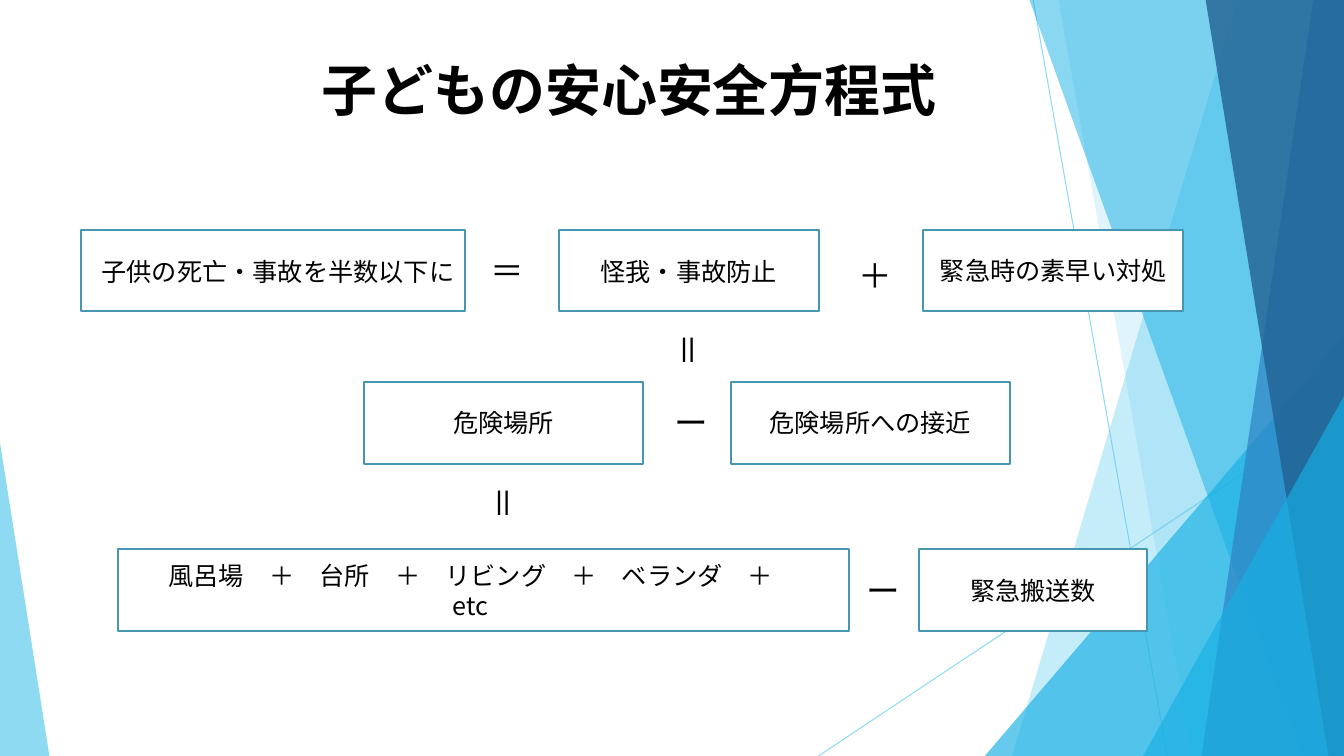
from dataclasses import dataclass

from lxml.etree import SubElement
from pptx import Presentation
from pptx.dml.color import RGBColor
from pptx.enum.shapes import MSO_CONNECTOR, MSO_SHAPE
from pptx.enum.text import MSO_ANCHOR, MSO_AUTO_SIZE, PP_ALIGN
from pptx.oxml.ns import qn
from pptx.util import Pt


@dataclass(frozen=True)
class Theme:
    """Hold the colours, font and type sizes."""
    sky: str = "5FCBEF"
    cyan: str = "17B0E4"
    blue: str = "2E83C3"
    navy: str = "226292"
    edge: str = "4696B1"
    white: str = "FFFFFF"
    ink: str = "000000"
    font: str = "Noto Sans CJK JP"
    head: int = 40
    sign: int = 24
    body: int = 18


THEME = Theme()
WIDE, HIGH, TALL = 960, 540, 58.32


def apply(item, form):
    """Set each format value on the item."""
    for name, value in form.items():
        setattr(item, name, value)


def fade(shape, share):
    """Give the colours of a shape an opacity in percent."""
    for tint in shape.element.spPr.iter(qn("a:srgbClr")):
        SubElement(tint, qn("a:alpha"), val=str(share * 1000))


def paint(shape, color):
    """Fill a shape with one colour and drop its shadow."""
    shape.shadow.inherit = False
    shape.fill.solid()
    shape.fill.fore_color.rgb = RGBColor.from_string(color)


def write(frame, text, size, align, bold=False):
    """Write text with a line break at each newline."""
    para = frame.paragraphs[0]
    para.alignment = align
    for count, part in enumerate(text.split("\n")):
        if count:
            para.add_line_break()
        run = para.add_run()
        run.text = part
        apply(run.font, {"name": THEME.font, "size": Pt(size), "bold": bold})
        run.font.color.rgb = RGBColor.from_string(THEME.ink)
        SubElement(run.font._element, qn("a:ea"), typeface=THEME.font)


def label(slide, box, text, size, bold=False, wrap=False, turn=0):
    """Place a text box that grows with its text."""
    note = slide.shapes.add_textbox(*map(Pt, box))
    note.rotation = turn
    apply(note.text_frame, {"word_wrap": wrap, "auto_size": MSO_AUTO_SIZE.SHAPE_TO_FIT_TEXT})
    write(note.text_frame, text, size, PP_ALIGN.LEFT, bold)


def panel(slide, box, text):
    """Place a framed box with centred text."""
    card = slide.shapes.add_shape(MSO_SHAPE.RECTANGLE, *map(Pt, box))
    paint(card, THEME.white)
    card.line.color.rgb = RGBColor.from_string(THEME.edge)
    card.line.width = Pt(1.5)
    apply(card.text_frame, {"word_wrap": True, "vertical_anchor": MSO_ANCHOR.MIDDLE})
    if text:
        write(card.text_frame, text, THEME.body, PP_ALIGN.CENTER)


def ray(slide, ends):
    """Draw a thin line behind the bands."""
    line = slide.shapes.add_connector(MSO_CONNECTOR.STRAIGHT, *map(Pt, ends))
    line.line.color.rgb = RGBColor.from_string(THEME.sky)
    line.line.width = Pt(0.75)
    fade(line, 70)
    SubElement(line.element.spPr, qn("a:effectLst"))


def band(slide, box, top, foot, color, share):
    """Draw a slanted band that fills the box to its right edge."""
    left, head, wide, high = box
    right, base = left + wide, head + high
    form = slide.shapes.build_freeform(Pt(top), Pt(head), scale=1.0)
    form.add_line_segments([(Pt(x), Pt(y)) for x, y in
                            ((right, head), (right, base), (foot, base))], close=True)
    shape = form.convert_to_shape()
    paint(shape, color)
    shape.line.fill.background()
    fade(shape, share)


def wedge(slide, box, left, top, wide, tip, color, share):
    """Draw a right triangle standing on the foot of the box."""
    base = box[1] + box[3]
    shape = slide.shapes.add_shape(MSO_SHAPE.ISOSCELES_TRIANGLE,
                                   *map(Pt, (box[0] + left, top, wide, base - top)))
    shape.adjustments[0] = tip
    paint(shape, color)
    shape.line.fill.background()
    fade(shape, share)


def decor(slide, box):
    """Draw the faceted backdrop in the given box."""
    for ends in ((738, 0, 833.76, HIGH), (WIDE, 290.16, 584.64, HIGH)):
        ray(slide, ends)
    band(slide, box, 884.16, 722.88, THEME.sky, 36)
    band(slide, box, 756, 851.76, THEME.sky, 20)
    wedge(slide, box, 703.44, 239.76, 256.56, 1, THEME.cyan, 66)
    band(slide, box, 735.12, 929.52, THEME.cyan, 50)
    band(slide, box, 938.16, 858.24, THEME.blue, 70)
    band(slide, box, 861.12, 948.96, THEME.navy, 80)
    wedge(slide, box, 816.48, 282.96, 143.52, 1, THEME.cyan, 66)
    wedge(slide, box, 0, 316.08, 35.28, 0, THEME.sky, 70)


def row(slide, spot, cards, notes=(), signs=(), turned=None):
    """Place one line of the formula from its top left spot."""
    left, top = spot
    for shift, wide, text in cards:
        panel(slide, (left + shift, top, wide, TALL), text)
    for shift, wide, text in notes:
        label(slide, (left + shift, top + 15.5, wide, 28.8), text, THEME.body)
    for shift, drop, text in signs:
        label(slide, (left + shift, top + drop, 38.88, 36), text, THEME.sign)
    if turned is not None:
        label(slide, (left + turned, top + 65.52, 32.4, 36), "＝", THEME.sign,
              wrap=True, turn=90)


def main():
    """Build the slide and save it."""
    deck = Presentation()
    apply(deck, {"slide_width": Pt(WIDE), "slide_height": Pt(HIGH)})
    slide = deck.slides.add_slide(deck.slide_layouts[6])
    decor(slide, (0, -0.72, WIDE, HIGH + 0.72))
    label(slide, (222.48, 36, 458.64, 55.44), "子どもの安心安全方程式", THEME.head, bold=True)
    row(slide, (57.6, 164.16),
        cards=((0, 274.32, ""), (342, 185.76, ""), (601.92, 185.76, "緊急時の素早い対処")),
        notes=((7.92, 269.28, "子供の死亡・事故を半数以下に"), (364.32, 141.84, "怪我・事故防止")),
        signs=((285.84, 10.8, "＝"), (548.64, 14.4, "＋")), turned=418.32)
    row(slide, (259.92, 272.88),
        cards=((0, 199.44, "危険場所"), (262.08, 199.44, "危険場所への接近")),
        signs=((214.56, 10.8, "ー"),), turned=83.52)
    row(slide, (84.24, 392.4),
        cards=((0, 522, "風呂場　＋　台所　＋　リビング　＋　ベランダ　＋　\netc　"),
               (572.4, 162.72, "緊急搬送数")),
        signs=((527.76, 10.8, "ー"),))
    deck.save("out.pptx")


if __name__ == "__main__":
    main()
